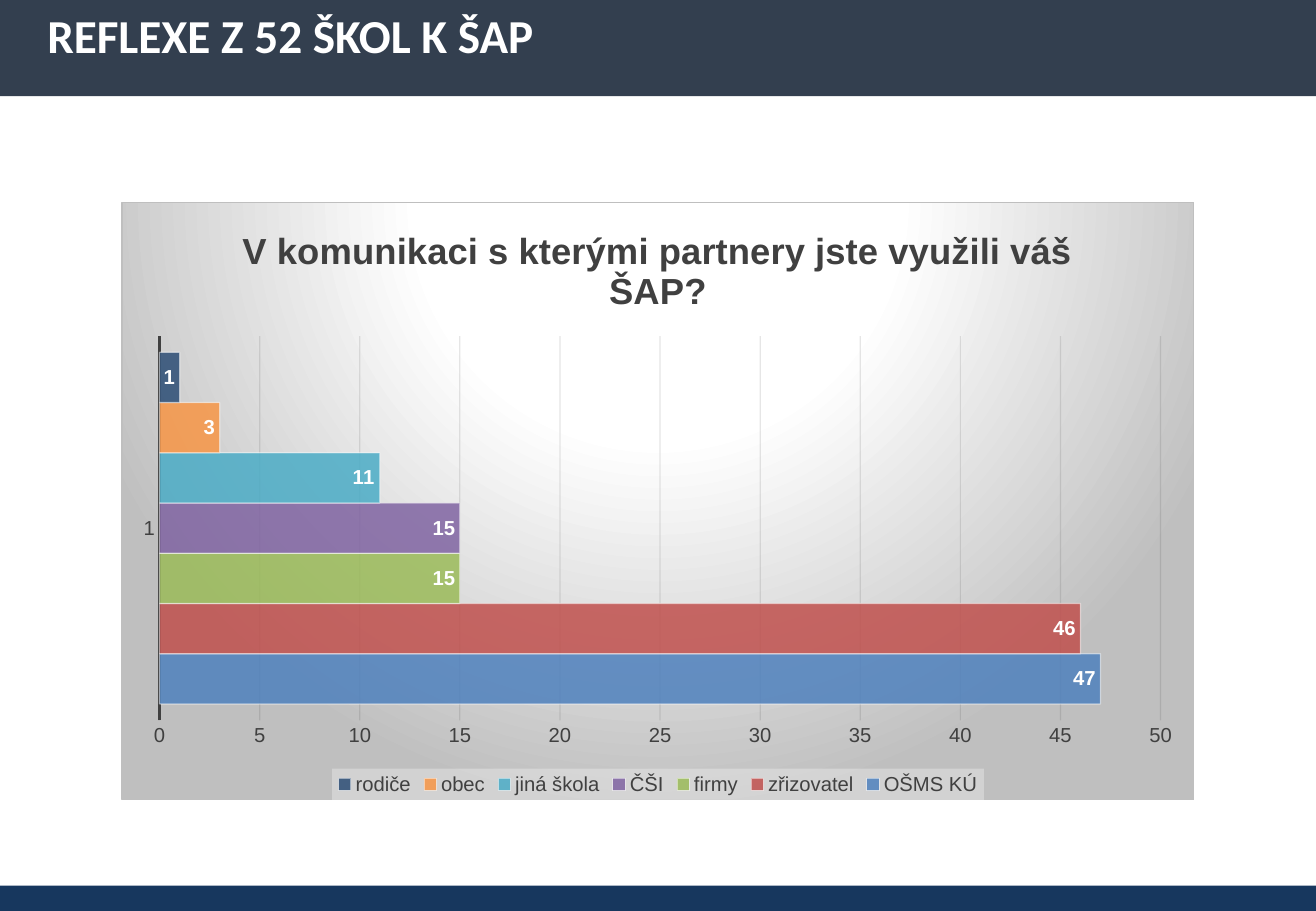
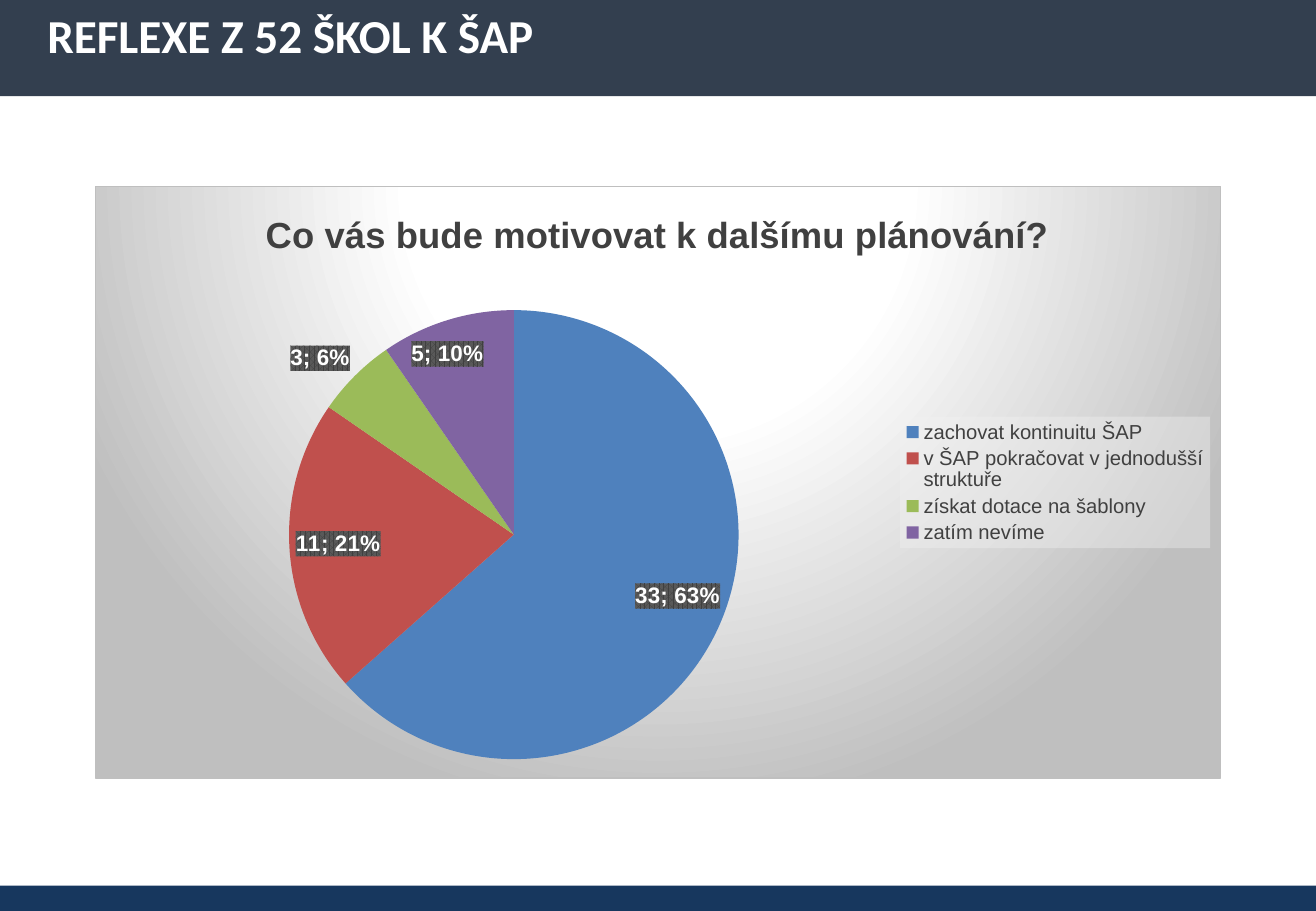
from dataclasses import dataclass

from pptx import Presentation
from pptx.chart.chart import Chart
from pptx.chart.data import CategoryChartData
from pptx.dml.color import RGBColor
from pptx.enum.chart import (XL_CHART_TYPE, XL_LABEL_POSITION,
                             XL_LEGEND_POSITION, XL_TICK_MARK)
from pptx.enum.shapes import MSO_SHAPE
from pptx.enum.text import MSO_ANCHOR, MSO_AUTO_SIZE, PP_ALIGN
from pptx.oxml import parse_xml
from pptx.oxml.ns import nsdecls, qn
from pptx.slide import Slide
from pptx.util import Pt

WIDE, HIGH = 780, 540
HEAD = "REFLEXE Z 52 ŠKOL K ŠAP"
COLORS = {
    "head": "333F4F", "foot": "17375E", "white": "FFFFFF", "gray": "BFBFBF",
    "text": "404040", "grid": "0D0D0D", "pale": "F2F2F2", "mid": "595959",
    "blue": "4F81BD", "red": "C0504D", "green": "9BBB59", "plum": "8064A2",
    "aqua": "4BACC6", "gold": "F79646", "navy": "2C4D75",
}


@dataclass
class Item:
    name: str
    value: int
    color: str


@dataclass
class Panel:
    title: str
    box: tuple[float, float, float, float]   # points
    plot: tuple[float, float, float, float]  # shares of the chart
    items: list[Item]
    pie: bool = False


PANELS = [
    Panel("V komunikaci s kterými partnery jste využili váš ŠAP?",
          (72, 119.5, 636, 355), (0.035, 0.224, 0.934, 0.643),
          [Item("OŠMS KÚ", 47, "blue"), Item("zřizovatel", 46, "red"),
           Item("firmy", 15, "green"), Item("ČŠI", 15, "plum"),
           Item("jiná škola", 11, "aqua"), Item("obec", 3, "gold"),
           Item("rodiče", 1, "navy")]),
    Panel("Co vás bude motivovat k dalšímu plánování?",
          (56.2, 110.2, 667.4, 351.4), (0.172, 0.209, 0.4, 0.759),
          [Item("zachovat kontinuitu ŠAP", 33, "blue"),
           Item("v ŠAP pokračovat v jednodušší struktuře", 11, "red"),
           Item("získat dotace na šablony", 3, "green"),
           Item("zatím nevíme", 5, "plum")], pie=True),
]


def rgb(key: str) -> RGBColor:
    return RGBColor.from_string(COLORS[key])


def paint(fill, key: str) -> None:
    fill.solid()
    fill.fore_color.rgb = rgb(key)


def style(font, size: float, key: str, bold: bool = False,
          face: str = "Arial") -> None:
    font.name, font.size, font.bold = face, Pt(size), bold
    font.color.rgb = rgb(key)


def clear(root, share: int) -> None:
    """Set the opacity of the last colour under root."""
    color = list(root.iter(qn("a:srgbClr")))[-1]
    color.append(parse_xml(f'<a:alpha {nsdecls("a")} val="{share * 1000}"/>'))


def tint(key: str, inner: str = "") -> str:
    return f'<a:srgbClr val="{COLORS[key]}">{inner}</a:srgbClr>'


def looks(body: str):
    return parse_xml(f'<c:spPr {nsdecls("c", "a")}>{body}</c:spPr>')


# Header and footer bands
def frame(slide: Slide) -> None:
    foot = slide.shapes.add_shape(MSO_SHAPE.RECTANGLE, Pt(0), Pt(525),
                                  Pt(WIDE), Pt(15))
    foot.shadow.inherit = False
    paint(foot.fill, "foot")
    foot.line.fill.background()

    head = slide.shapes.title
    head.left, head.top, head.width, head.height = (
        Pt(0), Pt(0), Pt(WIDE), Pt(57))
    paint(head.fill, "head")
    text = head.text_frame
    text.auto_size = MSO_AUTO_SIZE.NONE
    text.word_wrap = True
    text.vertical_anchor = MSO_ANCHOR.MIDDLE
    text.margin_left = text.margin_right = Pt(28)
    text.margin_top, text.margin_bottom = Pt(3), Pt(14.4)
    line = text.paragraphs[0]
    line.alignment, line.line_spacing = PP_ALIGN.LEFT, 0.9
    run = line.add_run()
    run.text = HEAD
    style(run.font, 28, "white", True, "Calibri")


# Backdrop, title, plot area and legend
def dress(chart: Chart, panel: Panel) -> None:
    chart.font.name, chart.font.size = "Arial", Pt(10)
    stops = "".join(f'<a:gs pos="{pos}">{tint(key)}</a:gs>' for pos, key in
                    ((0, "white"), (39000, "white"), (100000, "gray")))
    root = chart.element if hasattr(chart, "element") else chart._chartSpace
    root.find(qn("c:chart")).addnext(looks(
        f'<a:gradFill><a:gsLst>{stops}</a:gsLst><a:path path="circle">'
        '<a:fillToRect l="50000" t="-80000" r="50000" b="180000"/></a:path>'
        f'</a:gradFill><a:ln w="9525"><a:solidFill>{tint("gray")}'
        '</a:solidFill></a:ln>'))

    chart.has_title = True
    run = chart.chart_title.text_frame.paragraphs[0].add_run()
    run.text = panel.title
    style(run.font, 21.6, "text", True)
    chart.chart_title.include_in_layout = False

    area = next(root.iter(qn("c:plotArea")))
    for old in area.findall(qn("c:layout")):
        area.remove(old)
    spots = "".join(f'<c:{tag} val="{share}"/>'
                    for tag, share in zip("xywh", panel.plot))
    area.insert(0, parse_xml(
        f'<c:layout {nsdecls("c")}><c:manualLayout>'
        '<c:layoutTarget val="inner"/><c:xMode val="edge"/>'
        f'<c:yMode val="edge"/>{spots}</c:manualLayout></c:layout>'))

    chart.has_legend = True
    key = chart.legend
    key.position = (XL_LEGEND_POSITION.RIGHT if panel.pie
                    else XL_LEGEND_POSITION.BOTTOM)
    key.include_in_layout = False
    style(key.font, 12, "text")
    faint = tint("pale", '<a:alpha val="39000"/>')
    next(root.iter(qn("c:legend"))).find(qn("c:overlay")).addnext(
        looks(f"<a:solidFill>{faint}</a:solidFill>"))


def label(row, size: float, place: XL_LABEL_POSITION):
    marks = row.data_labels
    style(marks.font, size, "white", True)
    marks.show_value = True
    marks.position = place
    return marks


def bars(chart: Chart, items: list[Item]) -> None:
    plot = chart.plots[0]
    plot.gap_width, plot.overlap, plot.vary_by_categories = 65, 0, False
    for row, item in zip(plot.series, items):
        paint(row.format.fill, item.color)
        clear(row._element, 85)
        row.format.line.width = Pt(0.75)
        paint(row.format.line.fill, "white")
        clear(row._element, 50)
        label(row, 12, XL_LABEL_POSITION.INSIDE_END)

    cat, val = chart.category_axis, chart.value_axis
    for axis in (cat, val):
        axis.major_tick_mark = axis.minor_tick_mark = XL_TICK_MARK.NONE
        style(axis.tick_labels.font, 12, "text")
    cat.format.line.width = Pt(1.5)
    paint(cat.format.line.fill, "text")
    val.format.line.fill.background()
    val.minimum_scale, val.maximum_scale, val.major_unit = 0, 50, 5
    grid = val.major_gridlines.format.line
    grid.width = Pt(0.75)
    paint(grid.fill, "grid")
    clear(val._element.find(qn("c:majorGridlines")), 10)


def slices(chart: Chart, items: list[Item]) -> None:
    plot = chart.plots[0]
    plot.vary_by_categories = True
    row = plot.series[0]
    for spot, item in enumerate(items):
        paint(row.points[spot].format.fill, item.color)
    marks = label(row, 13.3, XL_LABEL_POSITION.BEST_FIT)
    marks.show_percentage = True
    node = row._element.find(qn("c:dLbls"))
    node.find(qn("c:txPr")).addprevious(looks(
        f'<a:pattFill prst="pct75"><a:fgClr>{tint("text")}</a:fgClr>'
        f'<a:bgClr>{tint("mid")}</a:bgClr></a:pattFill>'))
    node.find(qn("c:showBubbleSize")).addnext(parse_xml(
        f'<c:separator {nsdecls("c")}>; </c:separator>'))


def draw(slide: Slide, panel: Panel) -> None:
    data = CategoryChartData()
    if panel.pie:
        data.categories = [item.name for item in panel.items]
        data.add_series("Series 1", [item.value for item in panel.items])
    else:
        data.categories = ["1"]
        for item in panel.items:
            data.add_series(item.name, [item.value])
    kind = XL_CHART_TYPE.PIE if panel.pie else XL_CHART_TYPE.BAR_CLUSTERED
    chart = slide.shapes.add_chart(kind, *map(Pt, panel.box), data).chart
    dress(chart, panel)
    (slices if panel.pie else bars)(chart, panel.items)


def main() -> None:
    deck = Presentation()
    deck.slide_width, deck.slide_height = Pt(WIDE), Pt(HIGH)
    for panel in PANELS:
        slide = deck.slides.add_slide(deck.slide_layouts[5])
        frame(slide)
        draw(slide, panel)
    deck.save("out.pptx")


if __name__ == "__main__":
    main()
